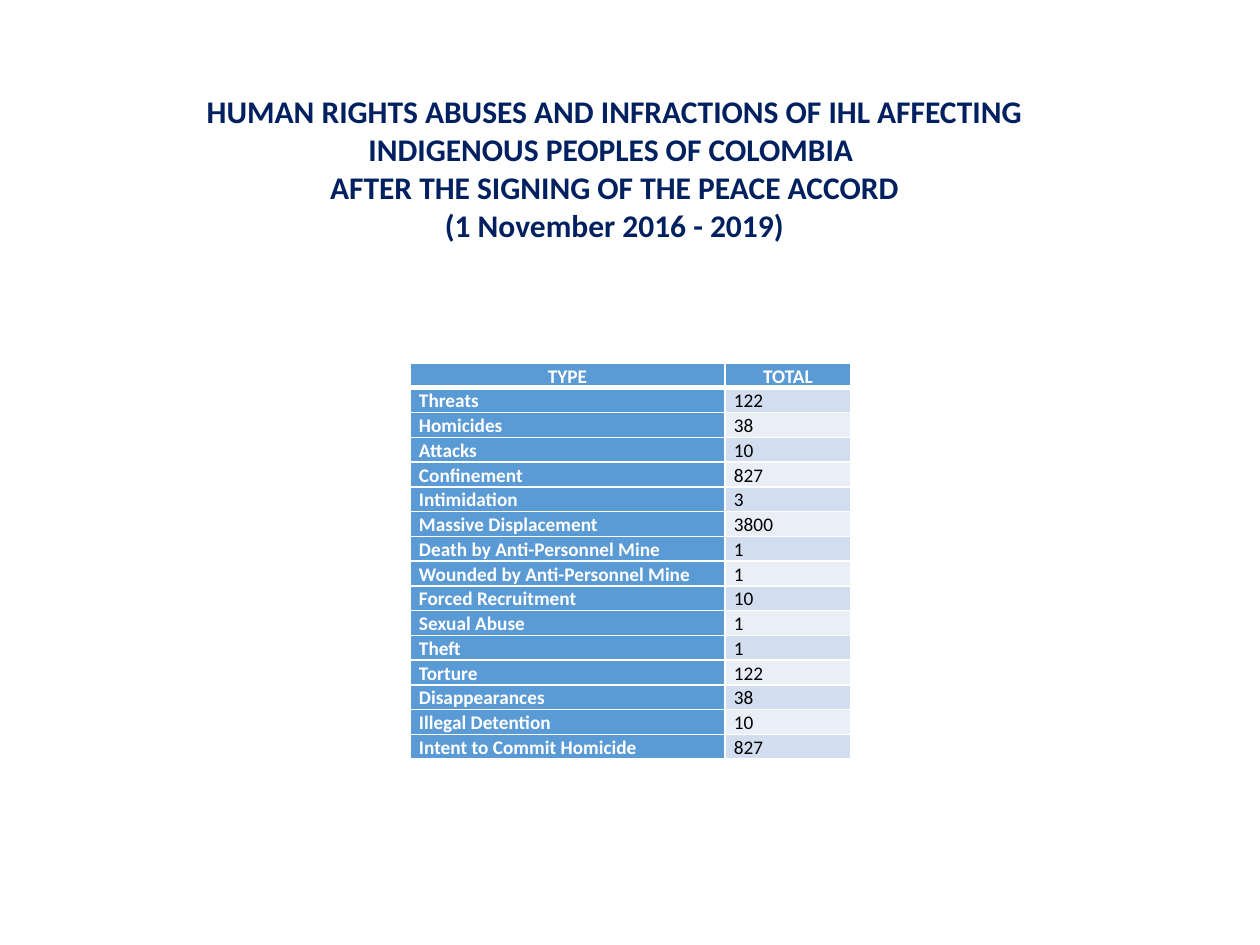
from lxml.etree import SubElement
from pptx import Presentation
from pptx.dml.color import RGBColor
from pptx.enum.text import PP_ALIGN
from pptx.oxml.ns import qn
from pptx.util import Pt

# Content
TITLE = [  # text, first-line indent in px
    ("HUMAN RIGHTS ABUSES AND INFRACTIONS OF IHL AFFECTING INDIGENOUS PEOPLES OF COLOMBIA ", 0),
    ("AFTER THE SIGNING OF THE PEACE ACCORD", -21),
    ("(1 November 2016 - 2019)", 0),
]
ROWS = [
    ("TYPE", "TOTAL"),
    ("Threats", 122),
    ("Homicides", 38),
    ("Attacks", 10),
    ("Confinement", 827),
    ("Intimidation", 3),
    ("Massive Displacement", 3800),
    ("Death by Anti-Personnel Mine", 1),
    ("Wounded by Anti-Personnel Mine", 1),
    ("Forced Recruitment", 10),
    ("Sexual Abuse", 1),
    ("Theft", 1),
    ("Torture", 122),
    ("Disappearances", 38),
    ("Illegal Detention", 10),
    ("Intent to Commit Homicide", 827),
]
COLORS = {"navy": "002060", "blue": "5B9BD5", "band": "D2DEEF",
          "pale": "EAEFF7", "white": "FFFFFF", "black": "000000"}

# Layout in px, 126 to the inch
SLIDE = (1260, 945)
TITLE_BOX = (123, 86, 983, 204)
TABLE_LEFT, TABLE_TOP = 410, 363
COLUMN_WIDTHS = (315, 126)
ROW_HEIGHT = 24
CELL_MARGINS = {"margin_left": 9, "margin_right": 9, "margin_top": 0, "margin_bottom": 0}


def px(value):
    return round(value * 914400 / 126)


def write(paragraph, text, color, **font_values):
    run = paragraph.add_run()
    run.text = text
    for name, value in {"name": "Calibri", **font_values}.items():
        setattr(run.font, name, value)
    run.font.color.rgb = RGBColor.from_string(COLORS[color])


def add_borders(cell, is_header):
    properties = cell._tc.get_or_add_tcPr()
    for position, side in enumerate(("lnL", "lnR", "lnT", "lnB")):
        width = Pt(3 if is_header and side == "lnB" else 1)
        line = SubElement(properties, qn(f"a:{side}"), w=str(width))
        fill = SubElement(line, qn("a:solidFill"))
        SubElement(fill, qn("a:srgbClr"), val=COLORS["white"])
        properties.insert(position, line)


presentation = Presentation()
presentation.slide_width, presentation.slide_height = map(px, SLIDE)
slide = presentation.slides.add_slide(presentation.slide_layouts[6])

# Title
frame = slide.shapes.add_textbox(*map(px, TITLE_BOX)).text_frame
frame.word_wrap = True
for index, (text, indent) in enumerate(TITLE):
    paragraph = frame.add_paragraph() if index else frame.paragraphs[0]
    paragraph.alignment = PP_ALIGN.CENTER
    if indent:
        paragraph._p.get_or_add_pPr().set("indent", str(px(indent)))
    write(paragraph, text, "navy", size=Pt(18), bold=True)

# Table of abuses
table = slide.shapes.add_table(
    len(ROWS), len(COLUMN_WIDTHS), px(TABLE_LEFT), px(TABLE_TOP),
    px(sum(COLUMN_WIDTHS)), px(ROW_HEIGHT * len(ROWS))).table
for column, width in zip(table.columns, COLUMN_WIDTHS):
    column.width = px(width)

for row_index, row in enumerate(ROWS):
    is_header = row_index == 0
    for column_index, value in enumerate(row):
        is_label = is_header or column_index == 0
        cell = table.cell(row_index, column_index)
        for name, margin in CELL_MARGINS.items():
            setattr(cell, name, px(margin))
        fill = "blue" if is_label else ("pale", "band")[row_index % 2]
        cell.fill.solid()
        cell.fill.fore_color.rgb = RGBColor.from_string(COLORS[fill])
        add_borders(cell, is_header)
        paragraph = cell.text_frame.paragraphs[0]
        paragraph.alignment = PP_ALIGN.CENTER if is_header else PP_ALIGN.LEFT
        paragraph.line_spacing = 1.07
        write(paragraph, str(value), "white" if is_label else "black",
              size=Pt(11), bold=is_label)

presentation.save("out.pptx")
